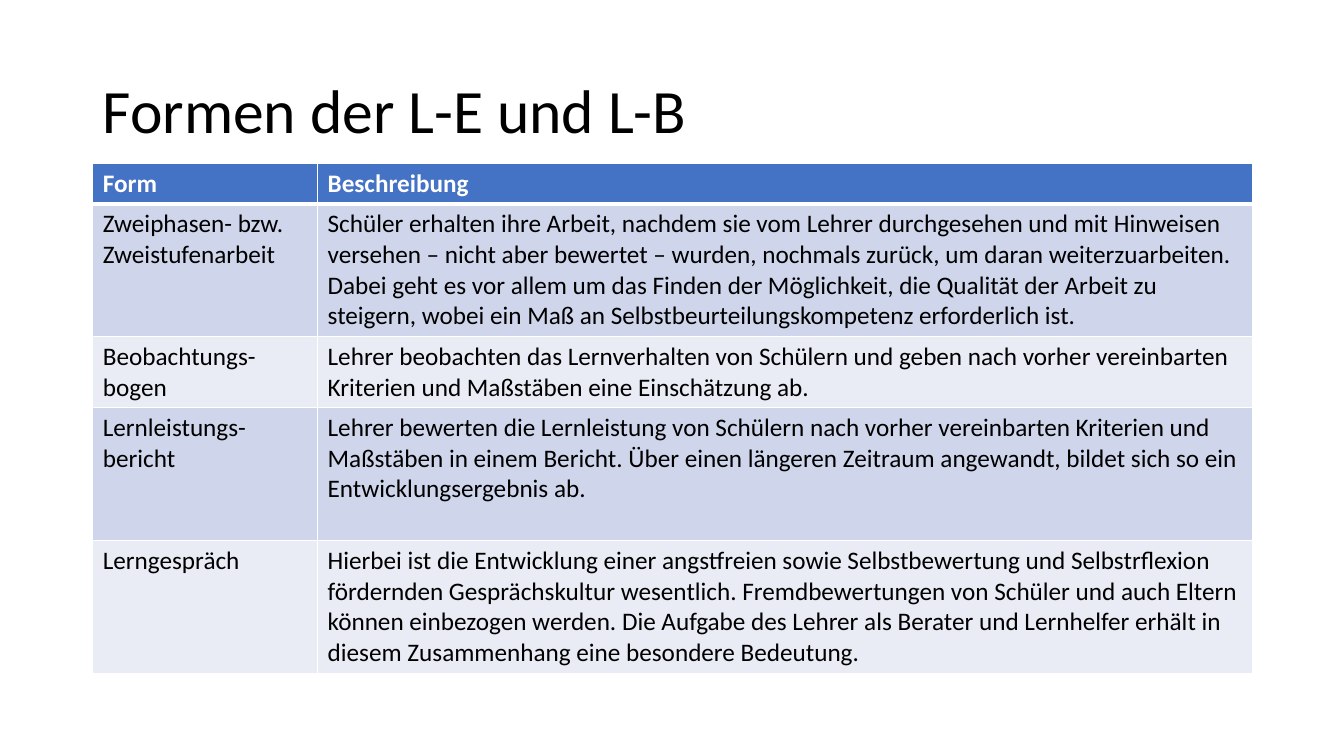
"""Build a slide with a table of forms of assessment and their descriptions."""
import pptx
import pptx.dml.color
import pptx.enum.text
import pptx.oxml.ns
import pptx.util
from lxml import etree

Inches = pptx.util.Inches
Pt = pptx.util.Pt

TITLE = "Formen der L-E und L-B"
ROWS = [
    ("Form", "Beschreibung"),
    ("Zweiphasen- bzw. Zweistufenarbeit",
     "Schüler erhalten ihre Arbeit, nachdem sie vom Lehrer durchgesehen und mit "
     "Hinweisen versehen – nicht aber bewertet – wurden, nochmals zurück, um daran "
     "weiterzuarbeiten.\n"
     "Dabei geht es vor allem um das Finden der Möglichkeit, die Qualität der Arbeit "
     "zu steigern, wobei ein Maß an Selbstbeurteilungskompetenz erforderlich ist."),
    ("Beobachtungs-bogen",
     "Lehrer beobachten das Lernverhalten von Schülern und geben nach vorher "
     "vereinbarten Kriterien und Maßstäben eine Einschätzung ab."),
    ("Lernleistungs-bericht",
     "Lehrer bewerten die Lernleistung von Schülern nach vorher vereinbarten Kriterien "
     "und Maßstäben in einem Bericht. Über einen längeren Zeitraum angewandt, bildet "
     "sich so ein Entwicklungsergebnis ab."),
    ("Lerngespräch",
     "Hierbei ist die Entwicklung einer angstfreien sowie Selbstbewertung und "
     "Selbstrflexion fördernden Gesprächskultur wesentlich. Fremdbewertungen von "
     "Schüler und auch Eltern können einbezogen werden. Die Aufgabe des Lehrer als "
     "Berater und Lernhelfer erhält in diesem Zusammenhang eine besondere Bedeutung."),
]
WIDTHS = [2.23, 9.27]
HEIGHTS = [0.4, 1.32, 0.7, 1.32, 1.32]
HEAD, BANDS = "4472C4", ["CFD5EA", "E9EBF5"]
LEFT, TOP = 0.92, 1.62


def color(code):
    return pptx.dml.color.RGBColor.from_string(code)


def style(frame, size, code, bold=False):
    for para in frame.paragraphs:
        for run in para.runs:
            run.font.name = "Calibri"
            run.font.size = Pt(size)
            run.font.bold = bold
            run.font.color.rgb = color(code)


def border(cell, sides):
    qn = pptx.oxml.ns.qn
    props = cell._tc.get_or_add_tcPr()
    for side, width in sides.items():
        line = etree.SubElement(props, qn(f"a:ln{side}"), w=str(Pt(width)))
        fill = etree.SubElement(line, qn("a:solidFill"))
        etree.SubElement(fill, qn("a:srgbClr"), val="FFFFFF")


def add_title(slide):
    box = slide.shapes.add_textbox(Inches(LEFT), Inches(0.4), Inches(11.5), Inches(1.45))
    frame = box.text_frame
    frame.word_wrap = True
    frame.vertical_anchor = pptx.enum.text.MSO_ANCHOR.MIDDLE
    frame.text = TITLE
    frame.paragraphs[0].line_spacing = 0.9
    style(frame, 44, "000000")


def add_forms(slide):
    table = slide.shapes.add_table(
        len(ROWS), len(WIDTHS), Inches(LEFT), Inches(TOP),
        Inches(sum(WIDTHS)), Inches(sum(HEIGHTS))).table
    for col, width in zip(table.columns, WIDTHS):
        col.width = Inches(width)
    for r, (texts, height) in enumerate(zip(ROWS, HEIGHTS)):
        table.rows[r].height = Inches(height)
        head = r == 0
        for c, text in enumerate(texts):
            cell = table.cell(r, c)
            border(cell, {"L": 1, "R": 1, "T": 3 if r == 1 else 1, "B": 3 if head else 1})
            cell.fill.solid()
            cell.fill.fore_color.rgb = color(HEAD if head else BANDS[(r - 1) % 2])
            cell.text_frame.text = text
            style(cell.text_frame, 18, "FFFFFF" if head else "000000", head)


def main():
    deck = pptx.Presentation()
    deck.slide_width, deck.slide_height = Inches(13.33), Inches(7.5)
    slide = deck.slides.add_slide(deck.slide_layouts[6])
    add_title(slide)
    add_forms(slide)
    deck.save("out.pptx")


if __name__ == "__main__":
    main()
